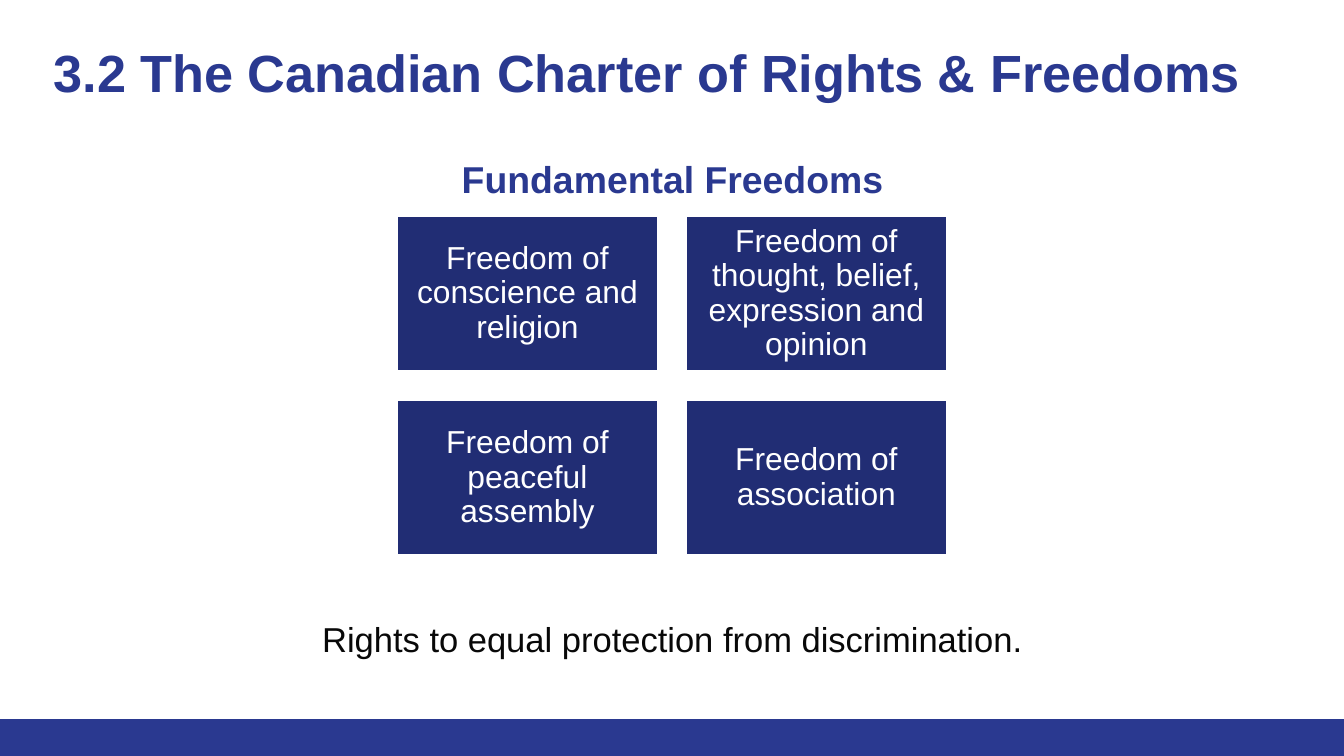
"""Build the slide on the fundamental freedoms in the Canadian Charter."""
from pptx import Presentation, util as u
from pptx.dml.color import RGBColor
from pptx.enum import shapes, text

BLUE, NAVY, WHITE, BLACK = "2A3990", "212D74", "FFFFFF", "080808"


def color(value):
    return RGBColor.from_string(value)


def add_box(page, area, words, fill=None, line=None, inset=(0.1, 0.1),
            anchor=text.MSO_ANCHOR.TOP, align=text.PP_ALIGN.CENTER,
            spacing=1.0, ink=WHITE, size=18, bold=False):
    place = [u.Inches(length) for length in area]
    if fill:
        box = page.shapes.add_shape(shapes.MSO_SHAPE.RECTANGLE, *place)
        box.shadow.inherit = False
        box.fill.solid()
        box.fill.fore_color.rgb = color(fill)
        box.line.fill.background()
    else:
        box = page.shapes.add_textbox(*place)
    if line:
        box.line.color.rgb = color(line)
        box.line.width = u.Pt(2)
    if words:
        across, down = (u.Inches(margin) for margin in inset)
        frame = box.text_frame
        para = frame.paragraphs[0]
        span = para.add_run()
        formats = (
            (frame, {"word_wrap": True, "vertical_anchor": anchor,
                     "margin_left": across, "margin_right": across,
                     "margin_top": down, "margin_bottom": down}),
            (para, {"alignment": align, "line_spacing": spacing}),
            (span, {"text": words}),
            (span.font, {"name": "Arial", "size": u.Pt(size), "bold": bold}),
        )
        for target, values in formats:
            for name, value in values.items():
                setattr(target, name, value)
        span.font.color.rgb = color(ink)
    return box


deck = Presentation()
deck.slide_width = u.Inches(10)
deck.slide_height = deck.slide_width * 9 // 16
page = deck.slides.add_slide(deck.slide_layouts[6])

add_box(page, (0, 5.35, 10, 0.28), "", fill=BLUE)
add_box(page, (0.3, 0.2, 9.32, 0.66),
        "3.2 The Canadian Charter of Rights & Freedoms",
        align=text.PP_ALIGN.LEFT, ink=BLUE, size=28, bold=True)
add_box(page, (2.19, 4.48, 5.62, 0.55),
        "Rights to equal protection from discrimination.",
        spacing=1.05, ink=BLACK, size=18.5)
add_box(page, (3.18, 1.11, 3.65, 0.36), "Fundamental Freedoms",
        inset=(0.1, 0.05), ink=BLUE, size=20, bold=True)

freedoms = (
    "Freedom of conscience and religion",
    "Freedom of thought, belief, expression and opinion",
    "Freedom of peaceful assembly",
    "Freedom of association",
)
left, top, width, height, gap = 2.95, 1.6, 1.95, 1.17, 0.2
for index, freedom in enumerate(freedoms):
    row, column = divmod(index, 2)
    area = (left + column * (width + gap), top + row * (height + gap), width, height)
    add_box(page, area, freedom, fill=NAVY, line=WHITE, inset=(0.07, 0.07),
            anchor=text.MSO_ANCHOR.MIDDLE, spacing=0.9, size=17)

deck.save("out.pptx")
